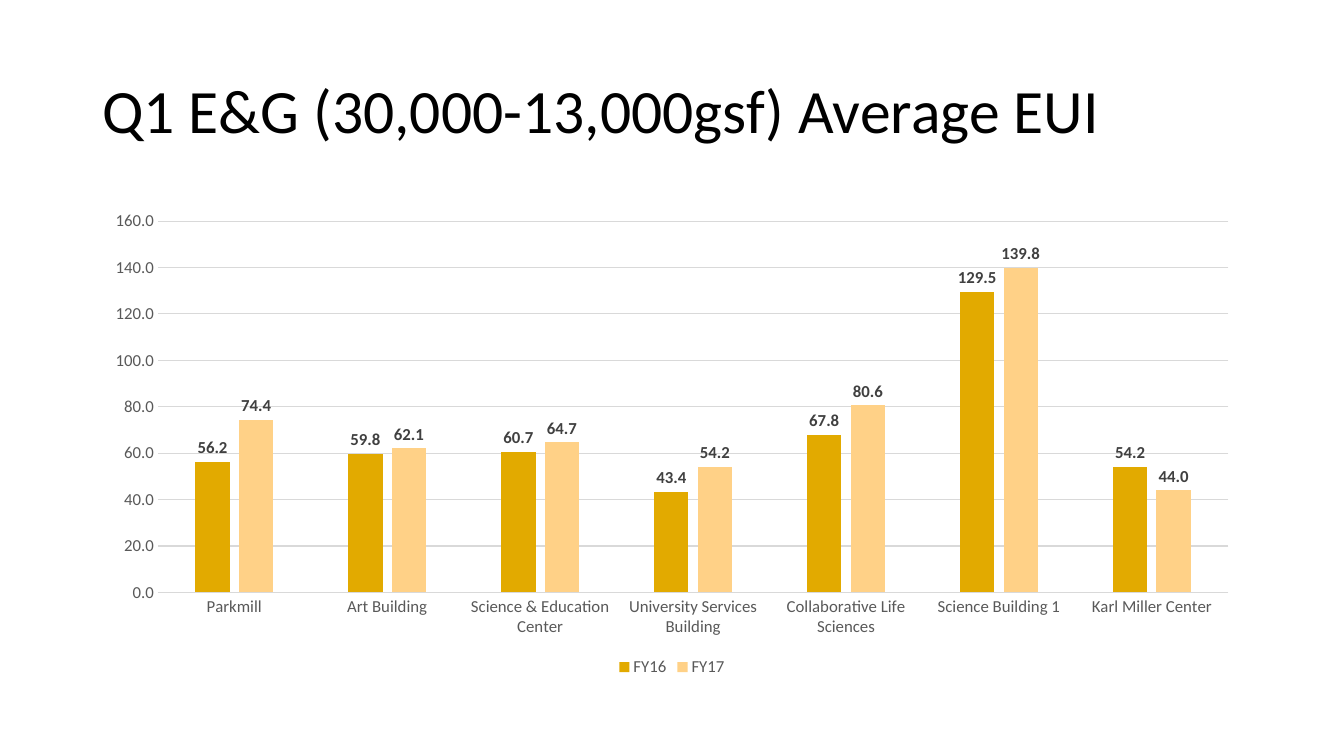
"""Build a slide comparing average building energy use in two fiscal years."""
from pptx import Presentation
from pptx.chart.data import CategoryChartData
from pptx.dml.color import RGBColor
from pptx.enum.chart import XL_CHART_TYPE, XL_LABEL_POSITION, XL_LEGEND_POSITION, XL_TICK_MARK
from pptx.enum.text import MSO_ANCHOR
from pptx.util import Pt

COLUMN_CLUSTERED = XL_CHART_TYPE.COLUMN_CLUSTERED
OUTSIDE_END = XL_LABEL_POSITION.OUTSIDE_END
LEGEND_BOTTOM = XL_LEGEND_POSITION.BOTTOM
NO_TICK = XL_TICK_MARK.NONE
MIDDLE = MSO_ANCHOR.MIDDLE

BLACK = RGBColor(0x00, 0x00, 0x00)
GREY = RGBColor(0x59, 0x59, 0x59)
DARK_GREY = RGBColor(0x40, 0x40, 0x40)
LIGHT_GREY = RGBColor(0xD9, 0xD9, 0xD9)
GOLD = RGBColor(0xE2, 0xAA, 0x00)
PALE_GOLD = RGBColor(0xFF, 0xD1, 0x87)

NUMBER_FORMAT = "0.0"
LEFT, WIDTH = 66, 828
BUILDINGS = [
    "Parkmill",
    "Art Building",
    "Science & Education Center",
    "University Services Building",
    "Collaborative Life Sciences",
    "Science Building 1",
    "Karl Miller Center",
]
YEARS = [
    ("FY16", [56.2, 59.8, 60.7, 43.4, 67.8, 129.5, 54.2], GOLD),
    ("FY17", [74.4, 62.1, 64.7, 54.2, 80.6, 139.8, 44.0], PALE_GOLD),
]


class SlideBuilder:
    """Hold the font and the current slide, and add elements to it."""

    def __init__(self, slide, font_name):
        self.slide = slide
        self.font_name = font_name

    def style_font(self, font, size, color, bold=False):
        font.name = self.font_name
        font.size = Pt(size)
        font.bold = bold
        font.color.rgb = color

    def style_line(self, line):
        line.color.rgb = LIGHT_GREY
        line.width = Pt(0.75)

    def add_title(self, text, left, top, width, height):
        shape = self.slide.shapes.add_textbox(Pt(left), Pt(top), Pt(width), Pt(height))
        text_frame = shape.text_frame
        text_frame.word_wrap = True
        text_frame.vertical_anchor = MIDDLE
        text_frame.text = text
        paragraph = text_frame.paragraphs[0]
        paragraph.line_spacing = 0.9
        self.style_font(paragraph.runs[0].font, 44, BLACK)

    def add_column_chart(self, categories, series_rows, left, top, width, height):
        chart_data = CategoryChartData(number_format=NUMBER_FORMAT)
        chart_data.categories = categories
        for name, values, _ in series_rows:
            chart_data.add_series(name, values)
        chart = self.slide.shapes.add_chart(
            COLUMN_CLUSTERED, Pt(left), Pt(top), Pt(width), Pt(height), chart_data
        ).chart
        self.style_font(chart.font, 10, BLACK)
        chart.has_title = False
        chart.has_legend = True
        chart.legend.position = LEGEND_BOTTOM
        chart.legend.include_in_layout = False
        self.style_font(chart.legend.font, 12, GREY)
        self.style_axes(chart)

        plot = chart.plots[0]
        plot.gap_width = 219
        plot.overlap = -27
        plot.vary_by_categories = False
        for series, (_, _, color) in zip(plot.series, series_rows):
            self.style_series(series, color)

    def style_axes(self, chart):
        for axis in (chart.category_axis, chart.value_axis):
            axis.major_tick_mark = NO_TICK
            axis.minor_tick_mark = NO_TICK
            self.style_font(axis.tick_labels.font, 12, GREY)
        self.style_line(chart.category_axis.format.line)
        value_axis = chart.value_axis
        value_axis.minimum_scale = 0
        value_axis.maximum_scale = 160
        value_axis.major_unit = 20
        value_axis.has_major_gridlines = True
        self.style_line(value_axis.major_gridlines.format.line)
        value_axis.format.line.fill.background()
        value_axis.tick_labels.number_format = NUMBER_FORMAT
        value_axis.tick_labels.number_format_is_linked = False

    def style_series(self, series, color):
        series.format.fill.solid()
        series.format.fill.fore_color.rgb = color
        series.invert_if_negative = False
        labels = series.data_labels
        labels.show_value = True
        labels.position = OUTSIDE_END
        labels.number_format = NUMBER_FORMAT
        labels.number_format_is_linked = False
        self.style_font(labels.font, 12, DARK_GREY, bold=True)


def main():
    presentation = Presentation()
    presentation.slide_width = Pt(960)
    presentation.slide_height = Pt(540)
    slide = presentation.slides.add_slide(presentation.slide_layouts[6])
    builder = SlideBuilder(slide, "Calibri")
    builder.add_title("Q1 E&G (30,000-13,000gsf) Average EUI", LEFT, 28.8, WIDTH, 104.4)
    builder.add_column_chart(BUILDINGS, YEARS, LEFT, 144, WIDTH, 342.6)
    presentation.save("out.pptx")


if __name__ == "__main__":
    main()
